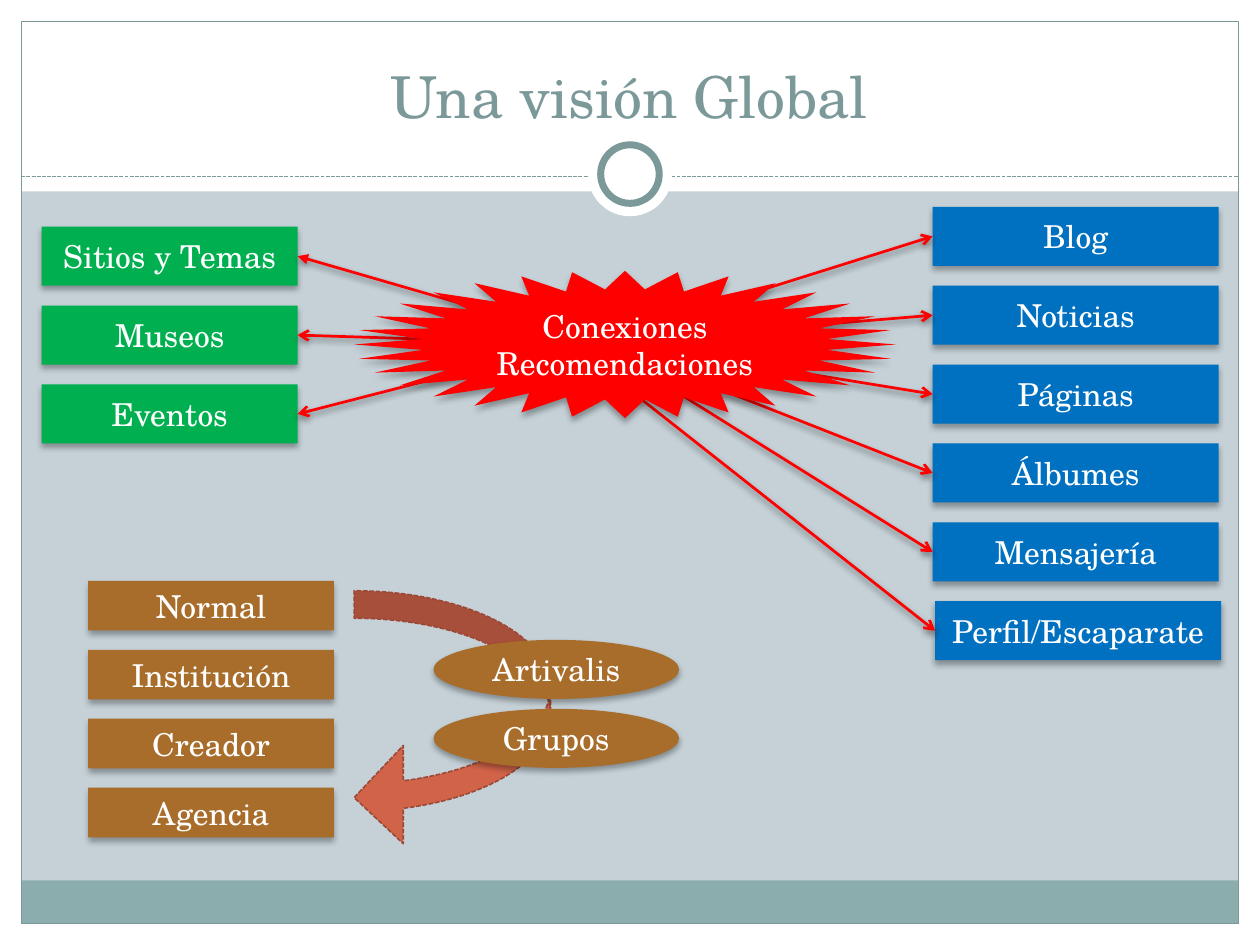
from lxml.etree import SubElement
from pptx import Presentation
from pptx.dml.color import RGBColor
from pptx.enum.dml import MSO_LINE
from pptx.enum.shapes import MSO_CONNECTOR, MSO_SHAPE
from pptx.enum.text import MSO_ANCHOR, PP_ALIGN
from pptx.oxml.ns import qn
from pptx.util import Cm, Pt

COLORS = {
    "white": "FFFFFF",
    "background": "C5D1D7",
    "teal": "7C999A",
    "footer": "8CADAE",
    "red": "FF0000",
    "green": "00B050",
    "blue": "0070C0",
    "brown": "A96D2B",
    "coral": "D16349",
    "rust": "9B4936",
    "shadow": "000000",
}
LEFT_SITE, RIGHT_SITE = 1, 3


class SlideBuilder:
    """Holds the style and the current slide, and draws each kind of element."""

    font = "TeX Gyre Schola"

    def __init__(self, slide):
        self.slide = slide
        fill = slide.background.fill
        fill.solid()
        fill.fore_color.rgb = self.color("background")

    def color(self, name):
        return RGBColor.from_string(COLORS[name])

    def format_text(self, text_frame, size, color, anchor):
        text_frame.word_wrap = True
        text_frame.vertical_anchor = anchor
        for paragraph in text_frame.paragraphs:
            paragraph.alignment = PP_ALIGN.CENTER
            for run in paragraph.runs:
                run.font.name = self.font
                run.font.size = Pt(size)
                run.font.color.rgb = self.color(color)

    def format_line(self, line, color, width, dashed=False):
        line.color.rgb = self.color(color)
        line.width = Pt(width)
        if dashed:
            line.dash_style = MSO_LINE.SQUARE_DOT

    def add_shadow(self, effects, opacity, blur, distance):
        shadow = SubElement(effects, qn("a:outerShdw"), blurRad=str(Pt(blur)),
                            dist=str(Pt(distance)), dir="5400000", rotWithShape="0")
        color = SubElement(shadow, qn("a:srgbClr"), val=COLORS["shadow"])
        SubElement(color, qn("a:alpha"), val=str(opacity * 1000))

    def title(self, text, left, top, width, height):
        title = self.slide.shapes.title
        self.slide.shapes._spTree.append(title._element)
        title.left, title.top = Cm(left), Cm(top)
        title.width, title.height = Cm(width), Cm(height)
        title.text_frame.text = text
        self.format_text(title.text_frame, 33, "teal", MSO_ANCHOR.BOTTOM)

    def shape(self, kind, left, top, width, height, fill=None, line=None):
        shape = self.slide.shapes.add_shape(kind, Cm(left), Cm(top), Cm(width), Cm(height))
        shape.shadow.inherit = False
        if fill:
            shape.fill.solid()
            shape.fill.fore_color.rgb = self.color(fill)
        else:
            shape.fill.background()
        if line:
            self.format_line(shape.line, *line)
        else:
            shape.line.fill.background()
        return shape

    def label(self, text, kind, left, top, width, height, fill):
        shape = self.shape(kind, left, top, width, height, fill)
        self.add_shadow(shape._element.spPr.find(qn("a:effectLst")), 32, 3.5, 2.2)
        shape.text_frame.text = text
        self.format_text(shape.text_frame, 18, "white", MSO_ANCHOR.MIDDLE)
        return shape

    def stack(self, texts, kind, left, top, width, height, pitch, fill):
        return [self.label(text, kind, left, top + index * pitch, width, height, fill)
                for index, text in enumerate(texts)]

    def line(self, start, end):
        points = [Cm(value) for value in (*start, *end)]
        return self.slide.shapes.add_connector(MSO_CONNECTOR.STRAIGHT, *points)

    def rule(self, start, end):
        connector = self.line(start, end)
        self.format_line(connector.line, "teal", 0.75, True)
        SubElement(connector._element.spPr, qn("a:effectLst"))

    def arrow(self, box, site, end, head="arrow"):
        connector = self.line((0, 0), end)
        connector.begin_connect(box, site)
        self.format_line(connector.line, "red", 1.57)
        properties = connector._element.spPr
        line = properties.find(qn("a:ln"))
        SubElement(line, qn("a:headEnd"), type=head)
        SubElement(line, qn("a:tailEnd"), type="arrow")
        self.add_shadow(SubElement(properties, qn("a:effectLst")), 45, 4, 2)


def draw_frame(builder):
    rectangle = MSO_SHAPE.RECTANGLE
    for place in ((0, 18.62, 25.4, 0.43), (0, 0, 25.4, 3.86),
                  (0, 0, 0.43, 19.05), (24.97, 0, 0.43, 19.05)):
        builder.shape(rectangle, *place, "white")
    builder.shape(rectangle, 0.43, 17.75, 24.54, 0.87, "footer")
    builder.shape(rectangle, 0.43, 0.43, 24.54, 18.19, line=("teal", 0.75))
    builder.rule((0.43, 3.56), (24.97, 3.56))
    for diameter, line in ((1.7, None), (1.18, ("teal", 4))):
        builder.shape(MSO_SHAPE.OVAL, 12.7 - diameter / 2, 3.51 - diameter / 2,
                      diameter, diameter, "white", line)


def draw_connections(builder):
    rectangle = MSO_SHAPE.RECTANGLE
    places = builder.stack(["Sitios y Temas", "Museos", "Eventos"],
                           rectangle, 0.84, 4.57, 5.16, 1.19, 1.59, "green")
    tools = builder.stack(["Blog", "Noticias", "Páginas", "Álbumes", "Mensajería"],
                          rectangle, 18.8, 4.17, 5.77, 1.19, 1.59, "blue")
    tools.append(builder.label("Perfil/Escaparate", rectangle,
                               18.85, 12.12, 5.77, 1.19, "blue"))
    place_ends = [(11.51, 6.76), (11.51, 6.93), (11.51, 6.93)]
    tool_ends = [(13.11, 6.55), (14.25, 6.73), (11.51, 6.76),
                 (12.19, 6.93), (13.11, 7.57), (11.51, 6.93)]
    for box, end, head in zip(places, place_ends, ("triangle", "arrow", "arrow")):
        builder.arrow(box, RIGHT_SITE, end, head)
    for box, end in zip(tools, tool_ends):
        builder.arrow(box, LEFT_SITE, end)
    builder.label("Conexiones\nRecomendaciones", MSO_SHAPE.STAR_32_POINT,
                  7.14, 5.46, 10.92, 2.97, "red")


def draw_profiles(builder):
    builder.stack(["Normal", "Institución", "Creador", "Agencia"],
                  MSO_SHAPE.RECTANGLE, 1.78, 11.71, 4.95, 1, 1.39, "brown")
    cycle = builder.shape(MSO_SHAPE.CURVED_LEFT_ARROW, 7.14, 11.91, 3.96, 5.16,
                          "coral", ("rust", 0.9, True))
    for index, value in enumerate((0.14, 0.5, 0.25)):
        cycle.adjustments[index] = value
    builder.stack(["Artivalis", "Grupos"],
                  MSO_SHAPE.OVAL, 8.74, 12.9, 4.95, 1.19, 1.39, "brown")


def main():
    presentation = Presentation()
    presentation.slide_width, presentation.slide_height = Cm(25.4), Cm(19.05)
    builder = SlideBuilder(presentation.slides.add_slide(presentation.slide_layouts[5]))
    draw_frame(builder)
    builder.title("Una visión Global", 0.84, 0.64, 23.7, 2.11)
    draw_connections(builder)
    draw_profiles(builder)
    presentation.save("out.pptx")


if __name__ == "__main__":
    main()
